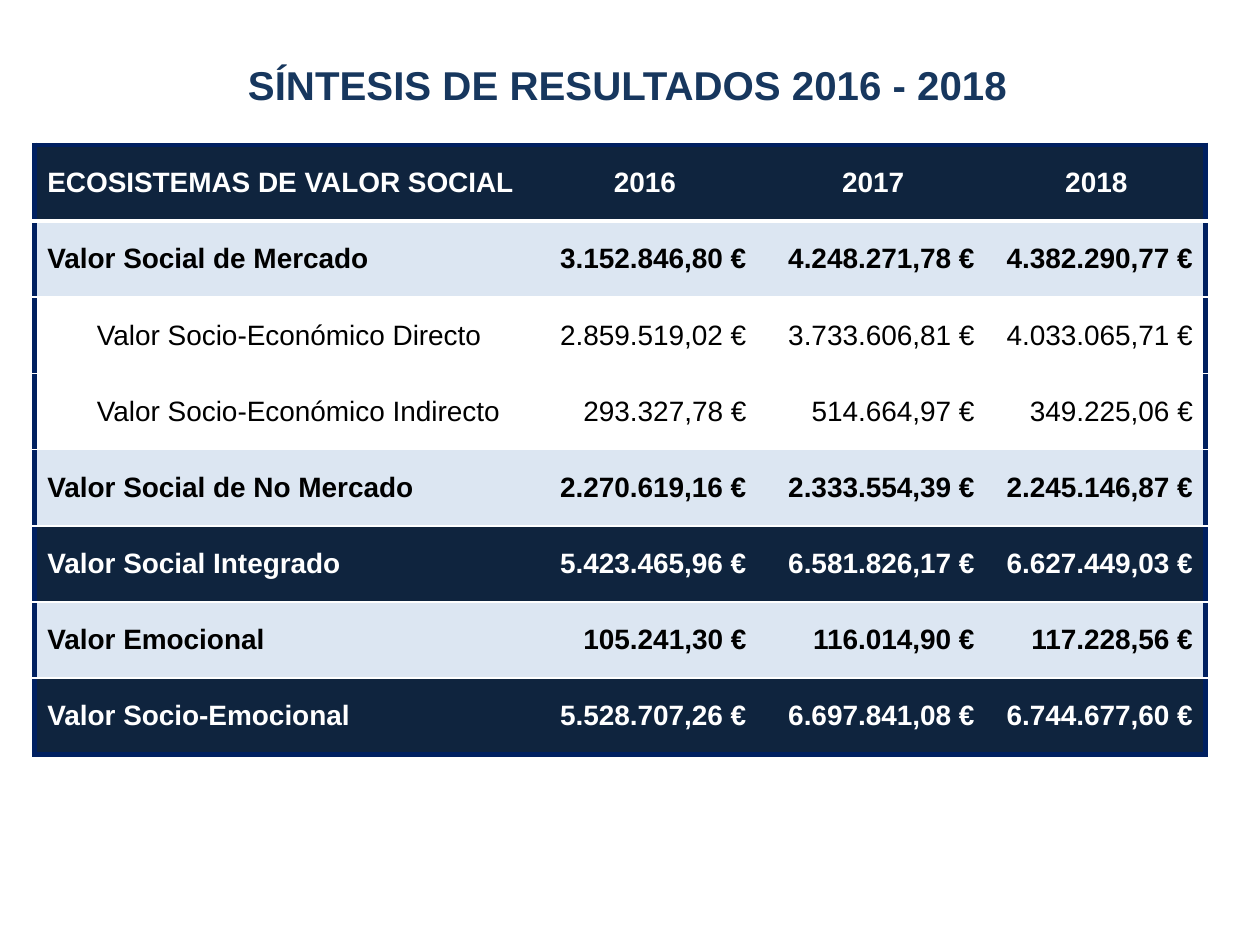
from lxml import etree
from pptx import Presentation
from pptx.dml.color import RGBColor
from pptx.enum.text import MSO_ANCHOR, MSO_AUTO_SIZE, PP_ALIGN
from pptx.oxml.ns import qn
from pptx.util import Cm, Pt

LEFT, MID, RIGHT = PP_ALIGN.LEFT, PP_ALIGN.CENTER, PP_ALIGN.RIGHT
CENTRE = MSO_ANCHOR.MIDDLE
GROW = MSO_AUTO_SIZE.SHAPE_TO_FIT_TEXT

FONT = "Arial"
WHITE = RGBColor(0xFF, 0xFF, 0xFF)
BLACK = RGBColor(0x00, 0x00, 0x00)
NAVY = RGBColor(0x0F, 0x24, 0x3E)
PALE = RGBColor(0xDC, 0xE6, 0xF2)
EDGE = RGBColor(0x00, 0x20, 0x60)
TITLE = RGBColor(0x17, 0x37, 0x5E)

TOTAL = (NAVY, WHITE, True)
GROUP = (PALE, BLACK, True)
DETAIL = (WHITE, BLACK, False)

WIDTHS = (10, 4.6, 4.6, 4.4)
ROWS = (
    (TOTAL, "ECOSISTEMAS DE VALOR SOCIAL", "2016", "2017", "2018"),
    (GROUP, "Valor Social de Mercado",
     "3.152.846,80 €", "4.248.271,78 €", "4.382.290,77 €"),
    (DETAIL, "Valor Socio-Económico Directo",
     "2.859.519,02 €", "3.733.606,81 €", "4.033.065,71 €"),
    (DETAIL, "Valor Socio-Económico Indirecto",
     "293.327,78 €", "514.664,97 €", "349.225,06 €"),
    (GROUP, "Valor Social de No Mercado",
     "2.270.619,16 €", "2.333.554,39 €", "2.245.146,87 €"),
    (TOTAL, "Valor Social Integrado",
     "5.423.465,96 €", "6.581.826,17 €", "6.627.449,03 €"),
    (GROUP, "Valor Emocional",
     "105.241,30 €", "116.014,90 €", "117.228,56 €"),
    (TOTAL, "Valor Socio-Emocional",
     "5.528.707,26 €", "6.697.841,08 €", "6.744.677,60 €"),
)


def write(para, text, size, color, bold):
    """Fill a paragraph with text in one font."""
    para.text = text
    font = para.font
    font.name, font.size, font.bold = FONT, Pt(size), bold
    font.color.rgb = color


def indent(para, margin, first=0):
    """Set the left margin and first-line indent of a paragraph."""
    props = para._p.get_or_add_pPr()
    props.set("marL", str(Cm(margin)))
    props.set("indent", str(Cm(first)))


def border(cell, side, color, width):
    """Draw one side of a cell, or clear it when color is None."""
    props = cell._tc.get_or_add_tcPr()
    line = etree.SubElement(props, qn(f"a:ln{side}"), w=str(Pt(width)))
    if color is None:
        etree.SubElement(line, qn("a:noFill"))
    else:
        fill = etree.SubElement(line, qn("a:solidFill"))
        etree.SubElement(fill, qn("a:srgbClr"), val=str(color))


def frame(cell, row, col):
    """Give a cell its borders according to its place in the table."""
    last = len(ROWS) - 1
    border(cell, "L", EDGE if col == 0 else None, 3)
    border(cell, "R", EDGE if col == len(WIDTHS) - 1 else None, 3)
    border(cell, "T", *((EDGE, 3) if row == 0 else (WHITE, 1)))
    border(cell, "B", *((EDGE, 3) if row == last else (WHITE, 1 if row else 3)))


def add_title(slide, left, top, width, height):
    """Add the slide heading."""
    box = slide.shapes.add_textbox(left, top, width, height).text_frame
    box.word_wrap = True
    box.auto_size = GROW
    para = box.paragraphs[0]
    write(para, "SÍNTESIS DE RESULTADOS 2016 - 2018", 23, TITLE, True)
    para.line_spacing = 1.3
    indent(para, 1.25, -1)


def add_grid(slide, left, top, width, height):
    """Add the table of social value by year."""
    grid = slide.shapes.add_table(
        len(ROWS), len(WIDTHS), left, top, width, height).table
    grid.horz_banding = False
    for column, share in zip(grid.columns, WIDTHS):
        column.width = int(width * share / sum(WIDTHS))
    for row, ((fill, color, bold), *texts) in enumerate(ROWS):
        for col, text in enumerate(texts):
            cell = grid.cell(row, col)
            frame(cell, row, col)
            cell.fill.solid()
            cell.fill.fore_color.rgb = fill
            cell.vertical_anchor = CENTRE
            para = cell.text_frame.paragraphs[0]
            write(para, text, 16, color, bold)
            para.alignment = LEFT if col == 0 else RIGHT if row else MID
            if col == 0 and not bold:
                indent(para, 0, 1)


def main():
    """Build and save the slide."""
    deck = Presentation()
    deck.slide_width, deck.slide_height = Cm(25.4), Cm(19.05)
    slide = deck.slides.add_slide(deck.slide_layouts[6])
    add_title(slide, Cm(4.5), Cm(0.81), Cm(17.7), Cm(1.4))
    add_grid(slide, Cm(0.7), Cm(2.92), Cm(sum(WIDTHS)), Cm(12.29))
    deck.save("out.pptx")


if __name__ == "__main__":
    main()
